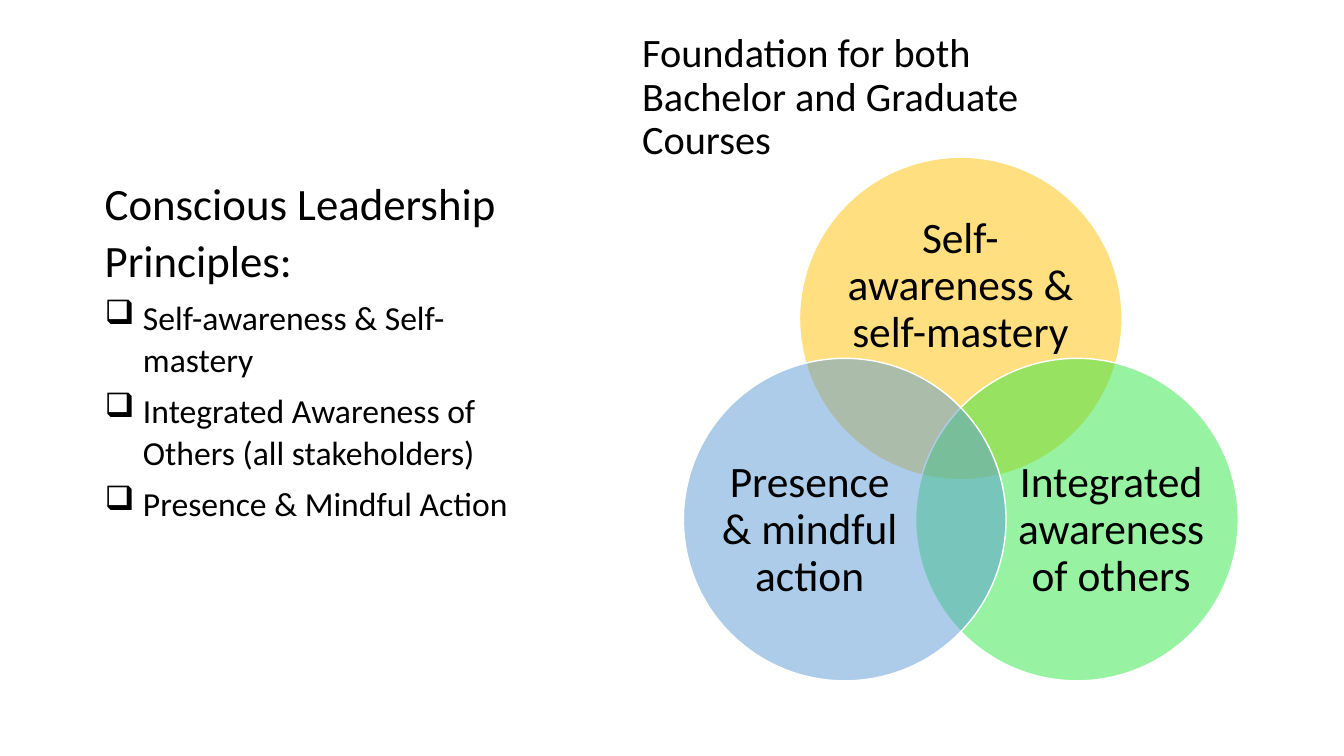
from math import cos, radians, sin

from lxml import etree
from pptx import Presentation
from pptx.dml.color import RGBColor
from pptx.enum import shapes, text
from pptx.oxml.ns import qn
from pptx.util import Inches, Pt

THEME = {
    "font": "Calibri", "ink": "000000", "rim": "FFFFFF",
    "gold": "FFC000", "green": "30E845", "blue": "5B9BD5",
    "title": 28.8, "head": 32, "item": 24, "label": 31,
}


def add_text(box, lines, anchor, **form):
    """Add a wrapped text box; each line pairs its words with a theme size."""
    frame = slide.shapes.add_textbox(*map(Inches, box)).text_frame
    frame.word_wrap = True
    frame.vertical_anchor = anchor
    for i, (words, size) in enumerate(lines):
        para = frame.paragraphs[0] if i == 0 else frame.add_paragraph()
        para.text = words
        for name, value in form.items():
            setattr(para, name, value)
        font = para.runs[0].font
        font.name = THEME["font"]
        font.size = Pt(THEME[size])
        font.color.rgb = RGBColor.from_string(THEME["ink"])
    return frame


deck = Presentation()
deck.slide_width, deck.slide_height = Inches(13.33), Inches(7.5)
slide = deck.slides.add_slide(deck.slide_layouts[6])

# Title
add_text((6.27, 0.18, 4.3, 1.49),
         [("Foundation for both Bachelor and Graduate Courses", "title")],
         text.MSO_ANCHOR.BOTTOM, line_spacing=0.9)

# Venn diagram: three circles evenly spaced around a hub
HUB_X, HUB_Y, ORBIT, SIZE = 9.53, 4.49, 1.33, 3.2
circles = [
    (-90, "gold", "Self-awareness & self-mastery", (8.35, 2.12, 2.35, 1.44)),
    (30, "green", "Integrated awareness of others", (10.06, 4.38, 1.92, 1.76)),
    (150, "blue", "Presence & mindful action", (7.07, 4.38, 1.92, 1.76)),
]
for angle, color, label, box in circles:
    left = HUB_X + ORBIT * cos(radians(angle)) - SIZE / 2
    top = HUB_Y + ORBIT * sin(radians(angle)) - SIZE / 2
    disc = slide.shapes.add_shape(
        shapes.MSO_SHAPE.OVAL, *map(Inches, (left, top, SIZE, SIZE)))
    disc.shadow.inherit = False
    disc.fill.solid()
    disc.fill.fore_color.rgb = RGBColor.from_string(THEME[color])
    tint = disc.fill._xPr.find(qn("a:solidFill"))[0]
    etree.SubElement(tint, qn("a:alpha"), val="50000")
    disc.line.color.rgb = RGBColor.from_string(THEME["rim"])
    disc.line.width = Pt(1)
    frame = add_text(box, [(label, "label")], text.MSO_ANCHOR.MIDDLE,
                     alignment=text.PP_ALIGN.CENTER, line_spacing=0.9)
    for side in ("left", "top", "right", "bottom"):
        setattr(frame, f"margin_{side}", 0)

# Principles
body = add_text((0.94, 1.67, 4.3, 4.17), [
    ("Conscious Leadership Principles:", "head"),
    ("Self-awareness & Self-mastery", "item"),
    ("Integrated Awareness of Others (all stakeholders)", "item"),
    ("Presence & Mindful Action", "item"),
], text.MSO_ANCHOR.TOP, line_spacing=1.05, space_after=Pt(6))
for para in body.paragraphs[1:]:
    props = para._p.get_or_add_pPr()
    props.set("marL", str(Inches(0.38)))
    props.set("indent", str(Inches(-0.38)))
    etree.SubElement(props, qn("a:buChar"), char="❑")

deck.save("out.pptx")
